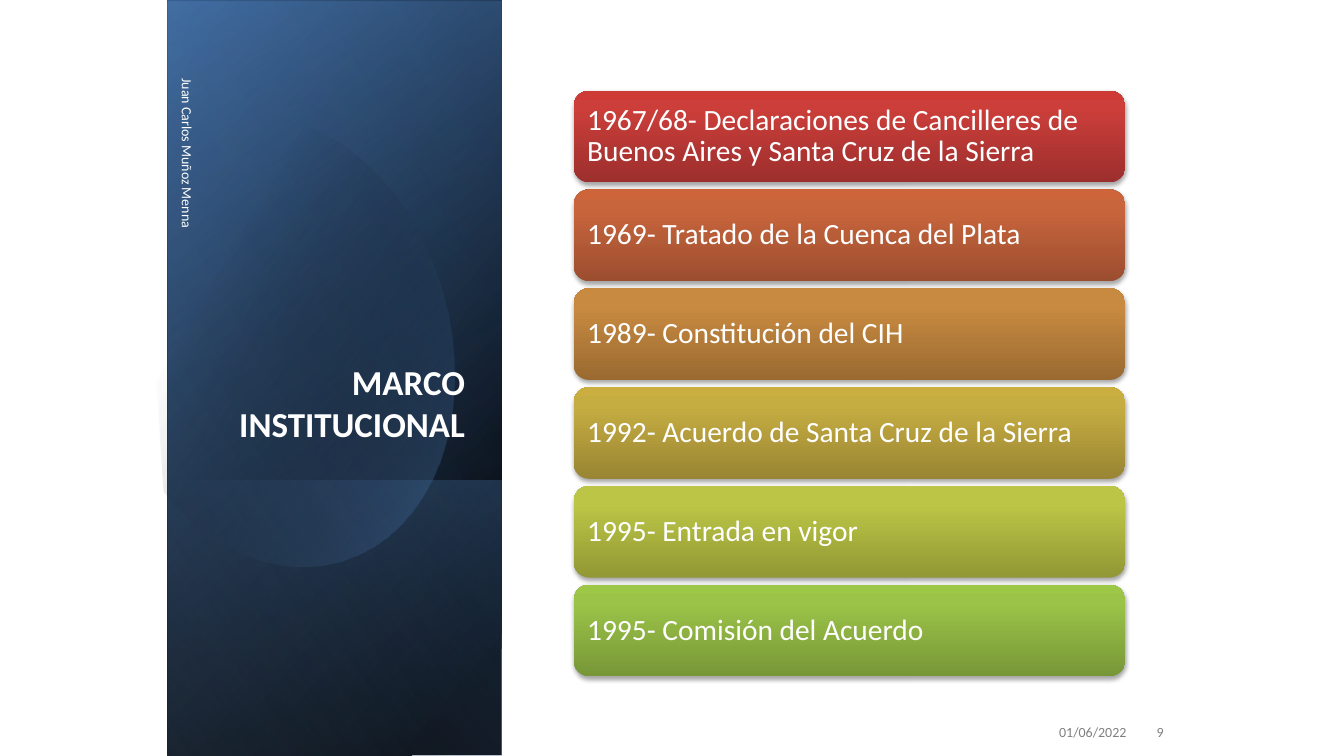
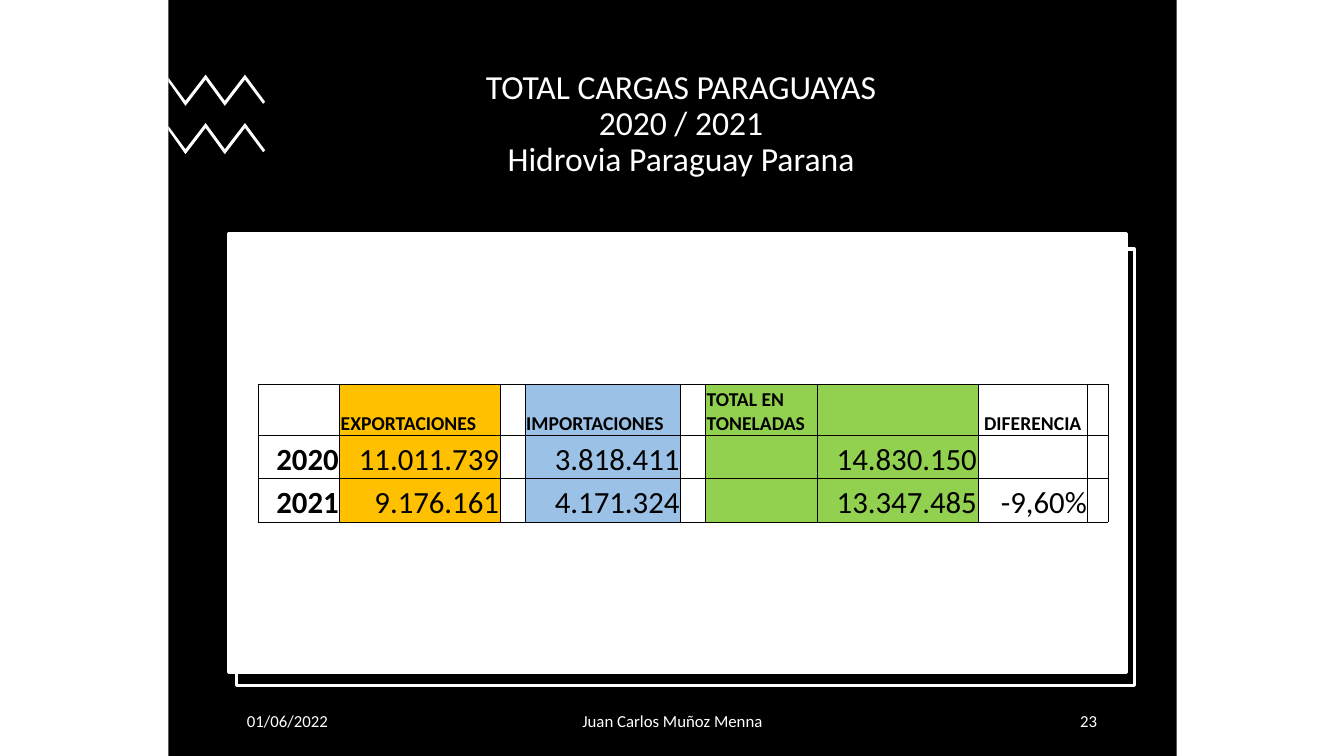
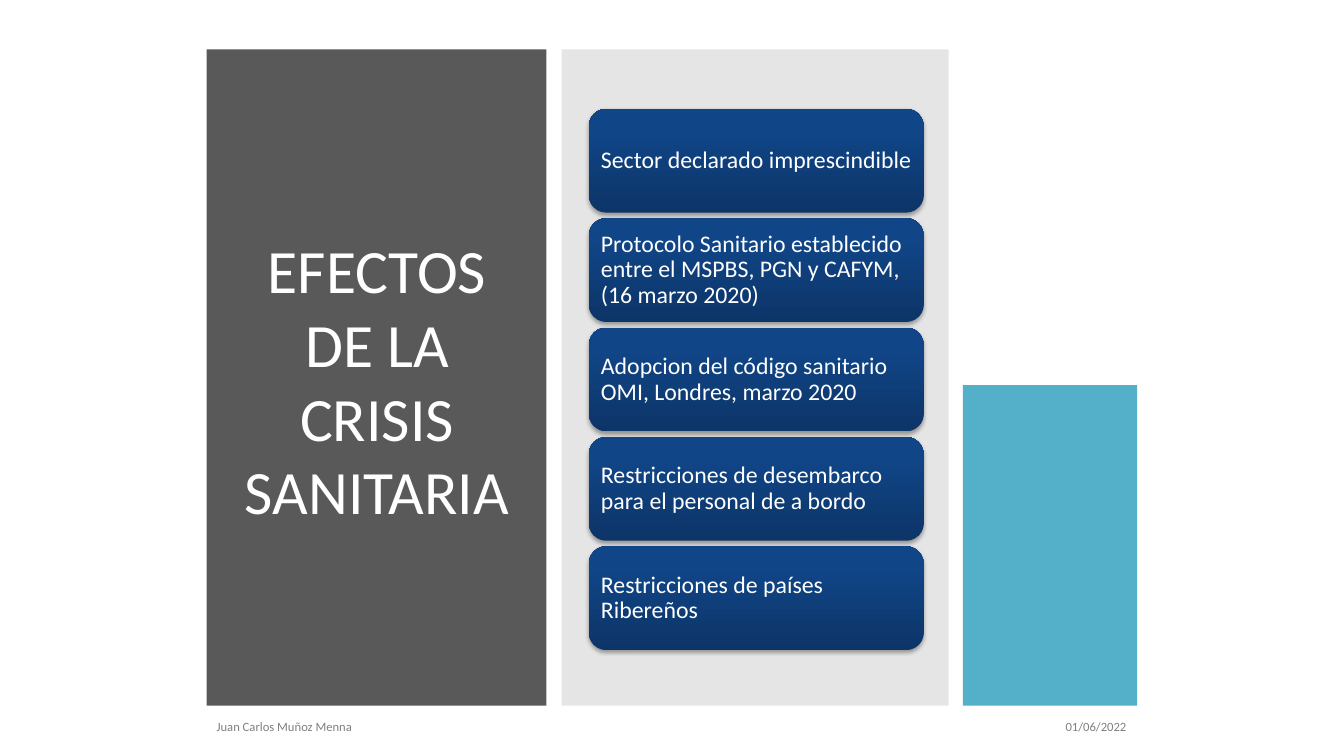
from dataclasses import dataclass

import lxml.etree
import pptx
import pptx.dml.color
import pptx.enum.shapes
import pptx.enum.text
import pptx.oxml.ns
import pptx.util

Inches = pptx.util.Inches
Pt = pptx.util.Pt
qn = pptx.oxml.ns.qn
ALIGN = pptx.enum.text.PP_ALIGN
ANCHOR = pptx.enum.text.MSO_ANCHOR
SHAPES = pptx.enum.shapes.MSO_SHAPE


@dataclass(frozen=True)
class Theme:
    font: str = "Calibri"
    white: str = "FFFFFF"
    black: str = "000000"
    gray: str = "808080"
    charcoal: str = "595959"
    teal: str = "4BACC6"
    navy: str = "376092"
    blue: str = "4F81BD"
    pale_blue: str = "95B3D7"
    exports: str = "FFC000"
    imports: str = "9BC2E6"
    totals: str = "92D050"
    milestones: tuple = (
        ("9C2F2D", "CB3E3A", "CE3B37"),
        ("9B4E2F", "C9653D", "CD643A"),
        ("9A6A31", "C88A40", "CB8B3D"),
        ("998533", "C6AD42", "CAAF40"),
        ("919835", "BCC545", "BFC843"),
        ("779737", "9BC348", "9DC746"),
    )
    effect: tuple = ("0D3568", "104587", "0E458A")
    side_title: int = 25
    table_title: int = 24
    big_title: int = 44
    milestone_text: int = 21
    effect_text: int = 17
    table_head: int = 14
    table_body: int = 22
    small: int = 10
    footer: int = 12
    tiny: int = 9


THEME = Theme()
AUTHOR = "Juan Carlos Muñoz Menna"
DATE = "01/06/2022"


def rgb(color):
    return pptx.dml.color.RGBColor.from_string(color)


def add_xml(parent, tag, **attributes):
    child = lxml.etree.SubElement(parent, qn(tag))
    for key, value in attributes.items():
        child.set(key, str(value))
    return child


def add_color(parent, color, alpha=100):
    node = add_xml(parent, "a:srgbClr", val=color)
    if alpha < 100:
        add_xml(node, "a:alpha", val=alpha * 1000)


def fill_solid(shape, color, alpha=100):
    shape.fill.solid()
    shape.fill.fore_color.rgb = rgb(color)
    if alpha < 100:
        node = shape._element.spPr.find(qn("a:solidFill")).find(qn("a:srgbClr"))
        add_xml(node, "a:alpha", val=alpha * 1000)


def fill_gradient(shape, stops, angle):
    """Stops are (position, colour, opacity) in percent; the angle runs clockwise."""
    shape.fill.gradient()
    gradient = shape._element.spPr.find(qn("a:gradFill"))
    for child in list(gradient):
        gradient.remove(child)
    stop_list = add_xml(gradient, "a:gsLst")
    for position, color, alpha in stops:
        add_color(add_xml(stop_list, "a:gs", pos=position * 1000), color, alpha)
    add_xml(gradient, "a:lin", ang=angle * 60000, scaled=0)


def add_block(slide, at, preset=SHAPES.RECTANGLE, color=None, alpha=100, outline=None):
    block = slide.shapes.add_shape(preset, *map(Inches, at))
    block.shadow.inherit = False
    if color:
        fill_solid(block, color, alpha)
    if outline:
        block.line.color.rgb = rgb(outline)
        block.line.width = Pt(2.25)
    else:
        block.line.fill.background()
    return block


def add_outline(slide, points):
    start, *rest = [tuple(map(Inches, point)) for point in points]
    builder = slide.shapes.build_freeform(*start, scale=1.0)
    builder.add_line_segments(rest, close=True)
    outline = builder.convert_to_shape()
    outline.shadow.inherit = False
    outline.line.fill.background()
    return outline


def style_text(frame, text, size, color, align=ALIGN.LEFT, bold=False, spacing=None):
    frame.text = text
    for paragraph in frame.paragraphs:
        paragraph.alignment = align
        if spacing:
            paragraph.line_spacing = spacing
        for run in paragraph.runs:
            run.font.name = THEME.font
            run.font.size = Pt(size)
            run.font.bold = bold
            run.font.color.rgb = rgb(color)


def add_label(slide, at, text, size, color, align=ALIGN.LEFT, anchor=ANCHOR.MIDDLE,
              bold=False, spacing=None):
    label = slide.shapes.add_textbox(*map(Inches, at))
    label.text_frame.word_wrap = True
    label.text_frame.vertical_anchor = anchor
    style_text(label.text_frame, text, size, color, align, bold, spacing)
    return label


def add_card(slide, at, text, size, colors, inset):
    card = add_block(slide, at, SHAPES.ROUNDED_RECTANGLE)
    dark, middle, light = colors
    fill_gradient(card, [(0, dark, 100), (80, middle, 100), (100, light, 100)], 270)
    effects = card._element.spPr.find(qn("a:effectLst"))
    shadow = add_xml(effects, "a:outerShdw", blurRad=Pt(3.1), dist=Pt(1.8),
                     dir=90 * 60000, rotWithShape=0)
    add_color(shadow, THEME.black, 35)
    frame = card.text_frame
    frame.word_wrap = True
    frame.vertical_anchor = ANCHOR.MIDDLE
    frame.margin_left = frame.margin_right = Inches(inset)
    frame.margin_top = frame.margin_bottom = Inches(inset)
    style_text(frame, text, size, THEME.white, spacing=0.9)


def add_card_column(slide, first, last_top, texts, size, palettes, inset):
    """Spread cards evenly from the first card's place down to last_top."""
    left, top, width, height = first
    pitch = (last_top - top) / (len(texts) - 1)
    for index, (text, colors) in enumerate(zip(texts, palettes)):
        place = (left, top + index * pitch, width, height)
        add_card(slide, place, text, size, colors, inset)


def curve(start, control_a, control_b, end, steps=16):
    """Points along a cubic curve, without its start."""
    points = []
    for step in range(1, steps + 1):
        t = step / steps
        weights = ((1 - t) ** 3, 3 * t * (1 - t) ** 2, 3 * t * t * (1 - t), t ** 3)
        points.append(tuple(
            sum(weight * value for weight, value in zip(weights, axis))
            for axis in zip(start, control_a, control_b, end)))
    return points


def add_glow_layer(slide, at, stops, angle):
    layer = add_block(slide, at)
    fill_gradient(layer, stops, angle)
    layer.rotation = 90
    layer._element.spPr.find(qn("a:xfrm")).set("flipH", "1")


def add_glow_ellipse(slide):
    points = [(2.63, 1.14)]
    for segment in (
        ((3.38, 1.22), (4.11, 1.92), (4.39, 2.9)),
        ((4.74, 4.12), (4.29, 5.31), (3.38, 5.57)),
        ((2.81, 5.74), (2.2, 5.5), (1.73, 5)),
    ):
        points += curve(points[-1], *segment)
    points += [(1.63, 4.88), (1.41, 1.66), (1.52, 1.54)]
    for segment in (
        ((1.69, 1.37), (1.88, 1.25), (2.11, 1.18)),
        ((2.28, 1.13), (2.46, 1.12), (2.63, 1.14)),
    ):
        points += curve(points[-1], *segment)
    ellipse = add_outline(slide, points[:-1])
    fill_gradient(ellipse, [(29, THEME.black, 0), (100, THEME.blue, 43)], 30)


def build_framework(slide):
    panel = (-0.43, 2.09, 7.5, 3.31)
    add_glow_layer(slide, panel, [(8, THEME.black, 100), (100, THEME.navy, 100)], 50)
    add_glow_layer(slide, (-0.43, 2.11, 7.5, 3.31),
                   [(0, THEME.black, 0), (99, THEME.blue, 46)], 30)
    add_glow_layer(slide, (1.95, 4.48, 2.74, 3.31),
                   [(2, THEME.blue, 29), (100, THEME.black, 30)], 130)
    add_glow_ellipse(slide)
    add_glow_layer(slide, panel, [(0, THEME.black, 0), (99, THEME.pale_blue, 11)], 120)

    add_label(slide, (2.15, 1.84, 2.56, 2.62), "MARCO INSTITUCIONAL", THEME.side_title,
              THEME.white, ALIGN.RIGHT, ANCHOR.BOTTOM, bold=True)
    author = add_label(slide, (0.17, 2.17, 3.38, 0.4), AUTHOR, THEME.small, THEME.white)
    author.rotation = 90
    add_label(slide, (9.02, 7.06, 2.25, 0.4), DATE, THEME.small, THEME.gray, ALIGN.RIGHT)
    add_label(slide, (11.27, 7.06, 0.37, 0.4), "9", THEME.small, THEME.gray, ALIGN.RIGHT)

    milestones = (
        "1967/68- Declaraciones de Cancilleres de Buenos Aires y Santa Cruz de la Sierra",
        "1969- Tratado de la Cuenca del Plata",
        "1989- Constitución del CIH",
        "1992- Acuerdo de Santa Cruz de la Sierra",
        "1995- Entrada en vigor",
        "1995- Comisión del Acuerdo",
    )
    add_card_column(slide, (5.69, 0.9, 5.47, 0.91), 5.8, milestones,
                    THEME.milestone_text, THEME.milestones, 0.09)


def add_zigzag(slide, top):
    profile = (
        (2.04, 0), (2.23, 0.26), (2.43, 0), (2.63, 0.27), (2.61, 0.29), (2.43, 0.05),
        (2.23, 0.31), (2.04, 0.05), (1.84, 0.31), (1.67, 0.07), (1.67, 0.03), (1.84, 0.26),
    )
    zigzag = add_outline(slide, [(x, top + drop) for x, drop in profile])
    fill_solid(zigzag, THEME.white)


def add_cell_borders(cell):
    properties = cell._tc.get_or_add_tcPr()
    for index, side in enumerate(("a:lnL", "a:lnR", "a:lnT", "a:lnB")):
        border = lxml.etree.Element(qn(side))
        border.set("w", str(Pt(0.5)))
        add_color(add_xml(border, "a:solidFill"), THEME.black)
        properties.insert(index, border)


def add_cargo_table(slide):
    widths = (0.81, 1.59, 0.25, 1.54, 0.25, 1.11, 1.59, 1.09, 0.2)
    heights = (0.51, 0.43, 0.43)
    rows = (
        ("", "EXPORTACIONES", "", "IMPORTACIONES", "", "TOTAL EN TONELADAS", "",
         "DIFERENCIA", ""),
        ("2020", "11.011.739", "", "3.818.411", "", "", "14.830.150", "", ""),
        ("2021", "9.176.161", "", "4.171.324", "", "", "13.347.485", "-9,60%", ""),
    )
    column_fills = {1: THEME.exports, 3: THEME.imports, 5: THEME.totals, 6: THEME.totals}

    place = (2.56, 3.81, sum(widths), sum(heights))
    cargo = slide.shapes.add_table(len(rows), len(widths), *map(Inches, place)).table
    cargo.first_row = cargo.horz_banding = False
    for column, width in zip(cargo.columns, widths):
        column.width = Inches(width)
    for row, height in zip(cargo.rows, heights):
        row.height = Inches(height)

    for row_index, values in enumerate(rows):
        is_head = row_index == 0
        size = THEME.table_head if is_head else THEME.table_body
        for column_index, value in enumerate(values):
            cell = cargo.cell(row_index, column_index)
            if column_index in column_fills:
                cell.fill.solid()
                cell.fill.fore_color.rgb = rgb(column_fills[column_index])
            else:
                cell.fill.background()
            cell.margin_left = cell.margin_right = cell.margin_top = Inches(0.01)
            cell.margin_bottom = 0
            cell.vertical_anchor = ANCHOR.BOTTOM
            add_cell_borders(cell)
            align = ALIGN.LEFT if is_head else ALIGN.RIGHT
            if value == "DIFERENCIA":
                align = ALIGN.CENTER
            if value:
                style_text(cell.text_frame, value, size, THEME.black, align,
                           bold=is_head or column_index == 0)


def build_cargo(slide):
    add_block(slide, (1.67, 0, 10, 7.5), color=THEME.black)
    add_label(slide, (2.76, 0.62, 7.99, 1.23),
              "TOTAL CARGAS PARAGUAYAS\v2020 / 2021\vHidrovia Paraguay Parana",
              THEME.table_title, THEME.white, ALIGN.CENTER, spacing=0.9)
    for top in (0.74, 1.22):
        add_zigzag(slide, top)
    add_block(slide, (2.35, 2.47, 8.9, 4.33), color=THEME.black, outline=THEME.white)
    add_block(slide, (2.27, 2.32, 8.9, 4.35), color=THEME.white, outline=THEME.white)
    for left, width, text, align in (
        (2.35, 2.25, DATE, ALIGN.LEFT),
        (4.98, 3.38, AUTHOR, ALIGN.CENTER),
        (8.73, 2.25, "23", ALIGN.RIGHT),
    ):
        add_label(slide, (left, 6.95, width, 0.4), text, THEME.footer, THEME.white, align)
    add_cargo_table(slide)


def build_health_crisis(slide):
    add_block(slide, (2.05, 0.49, 3.37, 6.51), color=THEME.charcoal)
    add_label(slide, (2.3, 0.83, 2.88, 5.87), "EFECTOS DE LA CRISIS SANITARIA",
              THEME.big_title, THEME.white, ALIGN.CENTER)
    add_block(slide, (5.57, 0.49, 3.84, 6.51), color=THEME.gray, alpha=20)
    add_block(slide, (9.55, 3.82, 1.73, 3.18), color=THEME.teal, alpha=95)
    add_label(slide, (2.05, 7.01, 5.47, 0.4), AUTHOR, THEME.tiny, THEME.gray)
    add_label(slide, (9.02, 7.01, 2.25, 0.4), DATE, THEME.tiny, THEME.gray, ALIGN.RIGHT)

    effects = (
        "Sector declarado imprescindible",
        "Protocolo Sanitario establecido entre el MSPBS, PGN y CAFYM, (16 marzo 2020)",
        "Adopcion del código sanitario OMI, Londres, marzo 2020",
        "Restricciones de desembarco para el personal de a bordo",
        "Restricciones de países Ribereños",
    )
    add_card_column(slide, (5.84, 1.08, 3.32, 1.03), 5.42, effects,
                    THEME.effect_text, [THEME.effect] * len(effects), 0.07)


def main():
    deck = pptx.Presentation()
    deck.slide_width = Inches(13.33)
    deck.slide_height = Inches(7.5)
    for build in (build_framework, build_cargo, build_health_crisis):
        build(deck.slides.add_slide(deck.slide_layouts[6]))
    deck.save("out.pptx")


if __name__ == "__main__":
    main()
